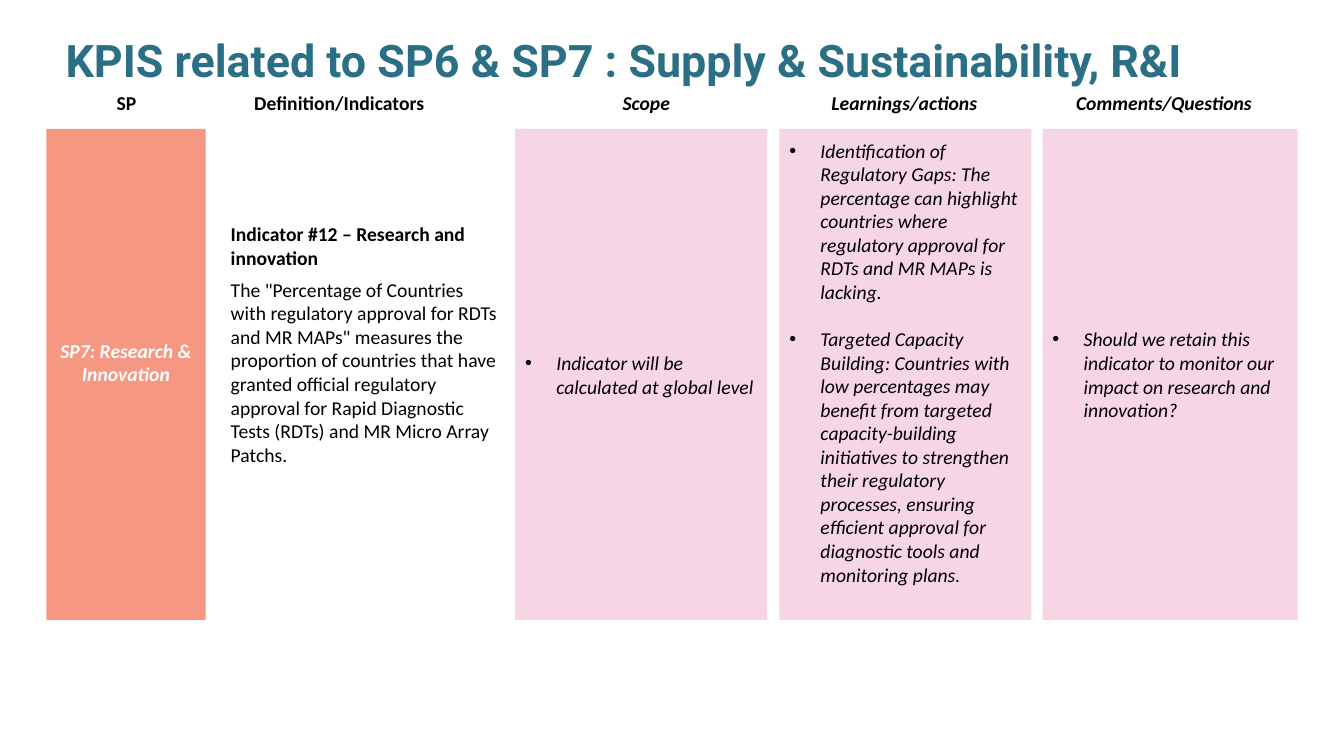
from pptx import Presentation
from pptx.dml.color import RGBColor
from pptx.enum.shapes import MSO_SHAPE
from pptx.enum.text import MSO_ANCHOR, MSO_AUTO_SIZE, PP_ALIGN
from pptx.oxml.ns import qn
from pptx.util import Inches, Pt
from lxml import etree

TEAL = RGBColor(0x2B, 0x6F, 0x86)
CORAL = RGBColor(0xF6, 0x97, 0x82)
PINK = RGBColor(0xF6, 0xD5, 0xE5)
BLACK = RGBColor(0, 0, 0)
WHITE = RGBColor(0xFF, 0xFF, 0xFF)

HEADER_TOP, HEADER_HEIGHT = 0.9, 0.24
ROW_TOP, ROW_HEIGHT = 1.28, 4.87

HEADERS = [
    ("SP", 0.58, 1.35, False),
    ("Definition/Indicators", 2.37, 1.99, False),
    ("Scope", 5.69, 1.44, True),
    ("Learnings/actions", 8.07, 1.8, True),
    ("Comments/Questions", 10.34, 2.41, True),
]
SCOPE = ["Indicator will be calculated at global level"]
LEARNINGS = [
    "Identification of Regulatory Gaps: The percentage can highlight countries "
    "where regulatory approval for RDTs and MR MAPs is lacking.",
    "Targeted Capacity Building: Countries with low percentages may benefit from "
    "targeted capacity-building initiatives to strengthen their regulatory "
    "processes, ensuring efficient approval for diagnostic tools and monitoring plans.",
]
QUESTIONS = ["Should we retain this indicator to monitor our impact on research and innovation?"]
DEFINITION = (
    'The "Percentage of Countries with regulatory approval for RDTs and MR MAPs" '
    "measures the proportion of countries that have granted official regulatory "
    "approval for Rapid Diagnostic Tests (RDTs) and MR Micro Array Patchs."
)


def add_run(p, text, color=BLACK, bold=False, italic=False, size=14, name="Calibri"):
    r = p.add_run()
    r.text = text
    r.font.name = name
    r.font.size = Pt(size)
    r.font.bold = bold
    r.font.italic = italic
    r.font.color.rgb = color


def set_frame(sp, right=0.1, bottom=0.05):
    tf = sp.text_frame
    tf.word_wrap = True
    tf.auto_size = MSO_AUTO_SIZE.NONE
    tf.vertical_anchor = MSO_ANCHOR.MIDDLE
    tf.margin_left, tf.margin_right = Inches(0.1), Inches(right)
    tf.margin_top, tf.margin_bottom = Inches(0.05), Inches(bottom)
    return tf


def add_text_frame(s, left, top, width, height, **margins):
    sp = s.shapes.add_textbox(Inches(left), Inches(top), Inches(width), Inches(height))
    return set_frame(sp, **margins)


def add_panel(s, left, width, fill, **margins):
    sp = s.shapes.add_shape(MSO_SHAPE.RECTANGLE, Inches(left), Inches(ROW_TOP),
                            Inches(width), Inches(ROW_HEIGHT))
    sp.shadow.inherit = False
    sp.fill.solid()
    sp.fill.fore_color.rgb = fill
    sp.line.fill.background()
    return set_frame(sp, **margins)


def set_bullet(p):
    pPr = p._p.get_or_add_pPr()
    pPr.set("marL", str(Inches(0.31)))
    pPr.set("indent", str(Inches(-0.31)))
    etree.SubElement(pPr, qn("a:buFont")).set("typeface", "Arial")
    etree.SubElement(pPr, qn("a:buChar")).set("char", "•")


def add_bullet_panel(s, left, width, items, **margins):
    tf = add_panel(s, left, width, PINK, **margins)
    for i, item in enumerate(items):
        p = tf.add_paragraph() if i else tf.paragraphs[0]
        set_bullet(p)
        p.alignment = PP_ALIGN.LEFT
        if i:
            p.space_before = Pt(17)
        add_run(p, item, italic=True)


def add_title(s, text):
    title = s.shapes.title
    title.left, title.top = Inches(0.55), Inches(0.18)
    title.width, title.height = Inches(12.16), Inches(0.74)
    tf = set_frame(title)
    tf.vertical_anchor = MSO_ANCHOR.BOTTOM
    p = tf.paragraphs[0]
    p.alignment = PP_ALIGN.LEFT
    p.line_spacing = 0.9
    add_run(p, text, TEAL, bold=True, size=32, name="Roboto")


def add_header(s, text, left, width, italic):
    p = add_text_frame(s, left, HEADER_TOP, width, HEADER_HEIGHT).paragraphs[0]
    p.alignment = PP_ALIGN.CENTER
    add_run(p, text, bold=True, italic=italic)


def add_definition(s):
    tf = add_text_frame(s, 2.19, ROW_TOP, 2.86, ROW_HEIGHT, bottom=0.65)
    add_run(tf.paragraphs[0], "Indicator #12 – Research and innovation", bold=True)
    p = tf.add_paragraph()
    p.space_before = Pt(6)
    add_run(p, DEFINITION)


def main():
    prs = Presentation()
    prs.slide_width, prs.slide_height = Inches(13.33), Inches(7.5)
    s = prs.slides.add_slide(prs.slide_layouts[5])
    add_title(s, "KPIS related to SP6 & SP7 : Supply & Sustainability, R&I")
    for header in HEADERS:
        add_header(s, *header)
    p = add_panel(s, 0.46, 1.58, CORAL, bottom=0.29).paragraphs[0]
    p.alignment = PP_ALIGN.CENTER
    add_run(p, "SP7: Research & Innovation", WHITE, bold=True, italic=True)
    add_bullet_panel(s, 5.11, 2.5, SCOPE)
    add_bullet_panel(s, 7.73, 2.5, LEARNINGS, right=0.03, bottom=0.29)
    add_bullet_panel(s, 10.34, 2.53, QUESTIONS)
    add_definition(s)
    prs.save("out.pptx")


if __name__ == "__main__":
    main()
